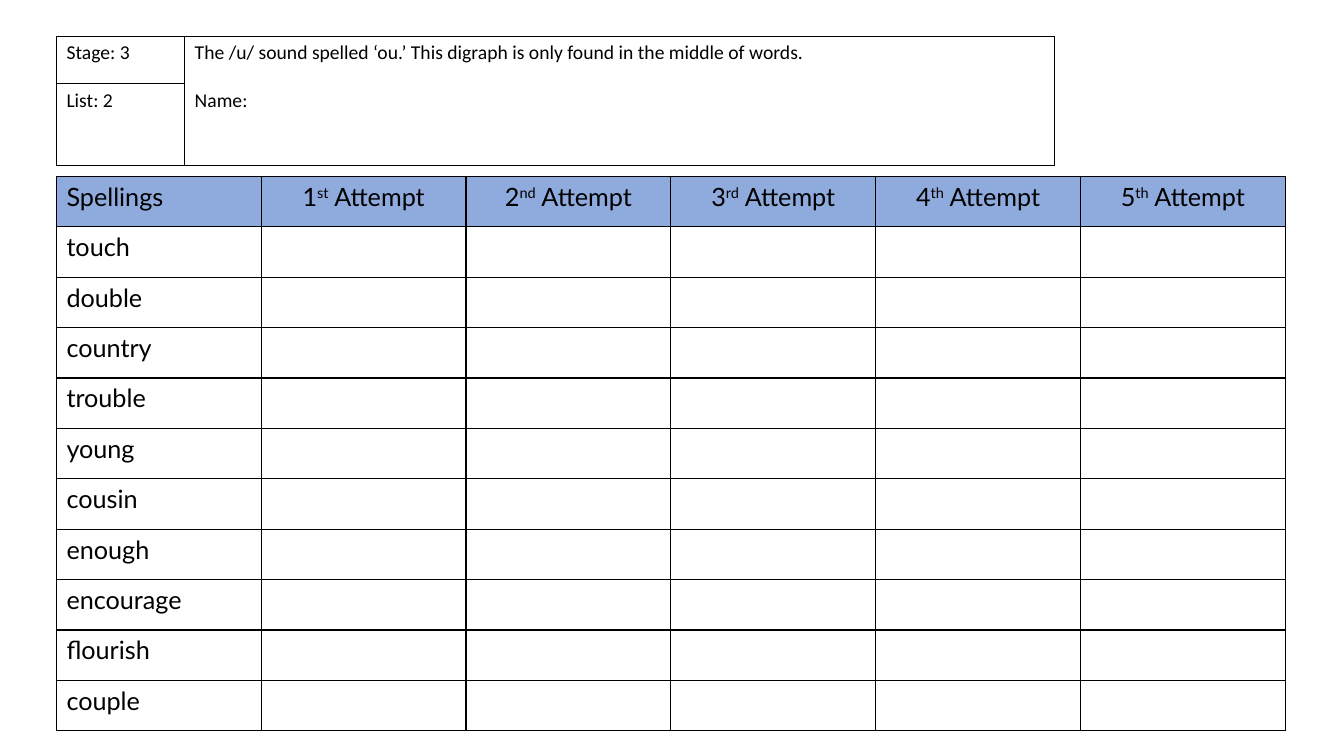
from lxml.etree import SubElement as Sub
from pptx import Presentation
from pptx.dml.color import RGBColor as Rgb
from pptx.enum.text import PP_ALIGN as Align
from pptx.oxml.ns import qn
from pptx.util import Pt

COLORS = {"ink": "000000", "head": "8FAADC"}
LABEL = {"name": "Calibri", "size": Pt(14)}
WORD = {"name": "Lato", "size": Pt(18)}
LEFT = 40.3

WORDS = ["touch", "double", "country", "trouble", "young",
         "cousin", "enough", "encourage", "flourish", "couple"]
ORDERS = ["st", "nd", "rd", "th", "th"]


def style(font, look):
    """Apply a dict of format values and the ink colour to a font."""
    for key, value in look.items():
        setattr(font, key, value)
    font.color.rgb = Rgb.from_string(COLORS["ink"])


def write(para, text, look, raised=False):
    """Add one run, raised if it is an ordinal ending."""
    run = para.add_run()
    run.text = text
    style(run.font, look)
    if raised:
        run._r.get_or_add_rPr().set("baseline", "30000")


def border(cell):
    """Draw a thin line on all four sides of a cell."""
    props = cell._tc.get_or_add_tcPr()
    for side in ("lnL", "lnR", "lnT", "lnB"):
        line = Sub(props, qn(f"a:{side}"), w=str(Pt(1)))
        fill = Sub(line, qn("a:solidFill"))
        Sub(fill, qn("a:srgbClr"), val=COLORS["ink"])


def grid(slide, top, widths, rows, height, look):
    """Add a plain ruled table with equal rows."""
    frame = slide.shapes.add_table(rows, len(widths), Pt(LEFT), Pt(top),
                                   Pt(sum(widths)), Pt(rows * height))
    table = frame.table
    table.first_row = table.horz_banding = False
    for col, width in zip(table.columns, widths):
        col.width = Pt(width)
    for row in table.rows:
        row.height = Pt(height)
    for cell in table.iter_cells():
        border(cell)
        cell.fill.background()
        style(cell.text_frame.paragraphs[0].font, look)
    return table


def add_words(slide):
    """Spelling list with five columns for attempts."""
    table = grid(slide, 126, [146.3] * 6, len(WORDS) + 1, 36, WORD)
    for row, word in enumerate(["Spellings"] + WORDS):
        write(table.cell(row, 0).text_frame.paragraphs[0], word, WORD)
    for col, order in enumerate(ORDERS, 1):
        para = table.cell(0, col).text_frame.paragraphs[0]
        para.alignment = Align.CENTER
        write(para, str(col), WORD)
        write(para, order, WORD, raised=True)
        write(para, " Attempt", WORD)
    for cell in table.rows[0].cells:
        cell.fill.solid()
        cell.fill.fore_color.rgb = Rgb.from_string(COLORS["head"])


def add_info(slide):
    """Stage, list, rule and name box."""
    table = grid(slide, 25.9, [91.6, 621.4], 2, 34, LABEL)
    table.cell(0, 1).merge(table.cell(1, 1))
    for row, text in enumerate(["Stage: 3", "List: 2"]):
        write(table.cell(row, 0).text_frame.paragraphs[0], text, LABEL)
    frame = table.cell(0, 1).text_frame
    rule = "The /u/ sound spelled ‘ou.’ This digraph is only found in the middle of words."
    write(frame.paragraphs[0], rule, LABEL)
    name = frame.add_paragraph()
    name.space_before = Pt(17)
    write(name, "Name:", LABEL)


def main():
    deck = Presentation()
    deck.slide_width, deck.slide_height = Pt(960), Pt(540)
    slide = deck.slides.add_slide(deck.slide_layouts[6])
    add_words(slide)
    add_info(slide)
    deck.save("out.pptx")


if __name__ == "__main__":
    main()
